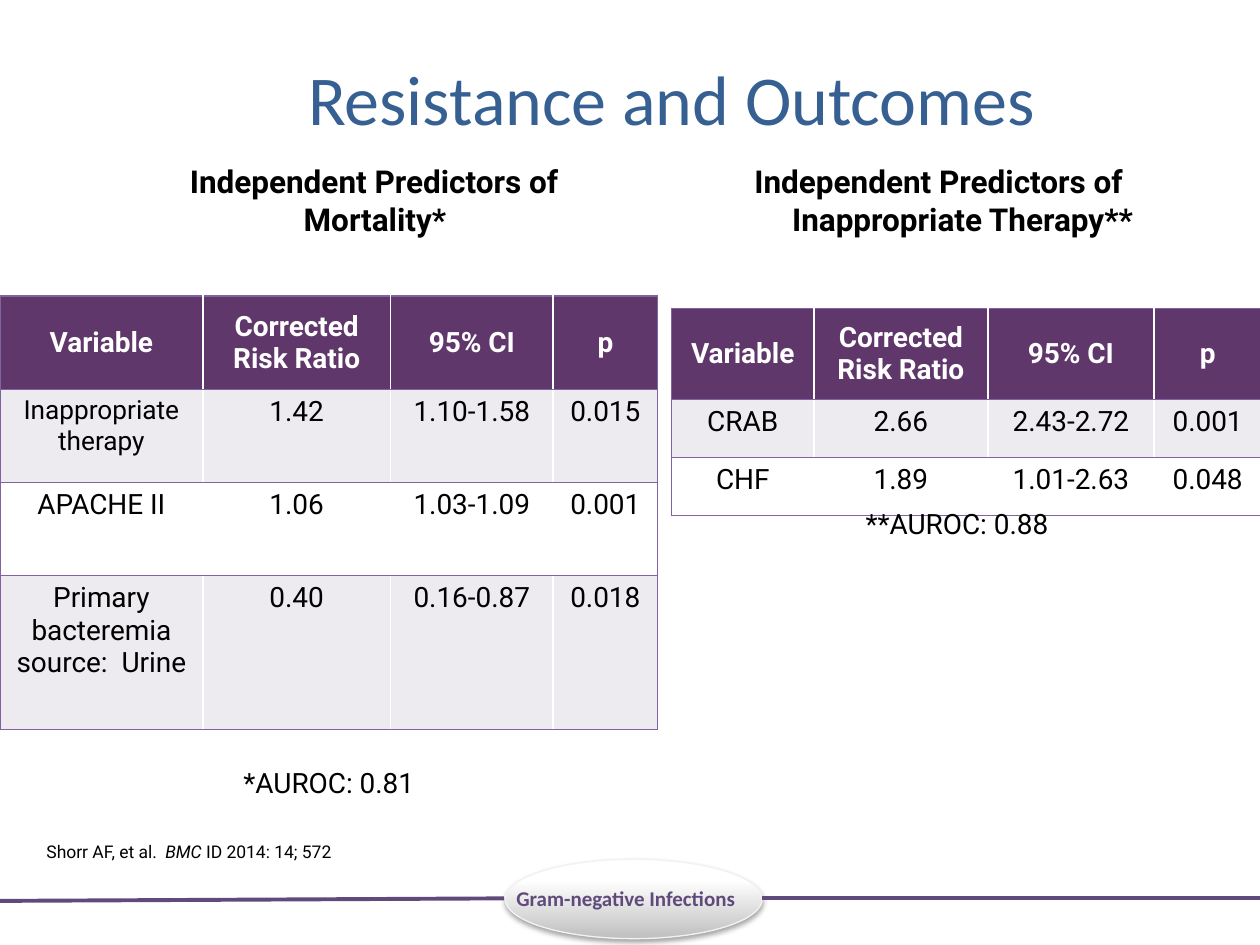
from dataclasses import dataclass

from lxml.etree import SubElement
from pptx import Presentation
from pptx.dml.color import RGBColor
from pptx.enum.shapes import MSO_CONNECTOR, MSO_SHAPE
from pptx.enum.text import MSO_ANCHOR, MSO_AUTO_SIZE, PP_ALIGN
from pptx.oxml import parse_xml
from pptx.oxml.ns import nsdecls, qn
from pptx.util import Inches, Pt

PURPLE, HEADER, BAND, BORDER = "604A7B", "5F376A", "EDEAF0", "8064A2"
BLUE, BLACK, WHITE = "376092", "000000", "FFFFFF"


@dataclass
class Box:
    left: float
    top: float
    width: float
    height: float

    def lengths(self) -> list:
        return [Inches(v) for v in (self.left, self.top, self.width, self.height)]


@dataclass
class PredictorTable:
    box: Box
    columns: list[float]
    heights: list[float]
    rows: list[list[str]]


@dataclass
class Label:
    box: Box
    text: str
    size: float = 16
    font: str = "Roboto"
    color: str = BLACK
    bold: bool = False
    align: PP_ALIGN = PP_ALIGN.CENTER
    anchor: MSO_ANCHOR = MSO_ANCHOR.TOP
    wrap: bool = False
    hanging: float = 0


COLUMN_NAMES = ["Variable", "Corrected Risk Ratio", "95% CI", "p"]
MORTALITY = PredictorTable(
    Box(0, 2.35, 5.22, 3.44), [1.61, 1.49, 1.29, 0.83], [0.74, 0.74, 0.74, 1.22],
    [COLUMN_NAMES,
     ["Inappropriate therapy", "1.42", "1.10-1.58", "0.015"],
     ["APACHE II", "1.06", "1.03-1.09", "0.001"],
     ["Primary bacteremia source:  Urine", "0.40", "0.16-0.87", "0.018"]])
THERAPY = PredictorTable(
    Box(5.33, 2.45, 4.67, 1.64), [1.13, 1.38, 1.32, 0.85], [0.72, 0.46, 0.46],
    [COLUMN_NAMES,
     ["CRAB", "2.66", "2.43-2.72", "0.001"],
     ["CHF", "1.89", "1.01-2.63", "0.048"]])

HEADINGS = [
    Label(Box(left, 1.24, 4.12, 1.14), text, 18, bold=True, wrap=True, hanging=0.38)
    for left, text in ((0.91, "Independent Predictors of Mortality*\t"),
                       (5.39, "Independent Predictors of Inappropriate Therapy**"))]
AUROC_NOTES = [Label(Box(1.75, 6.03, 1.72, 0.37), "*AUROC: 0.81"),
               Label(Box(6.69, 3.97, 1.81, 0.37), "**AUROC: 0.88")]
CITATION = Label(Box(0.27, 6.62, 2.59, 0.27), "Shorr AF, et al.  ", 10,
                 align=PP_ALIGN.LEFT, anchor=MSO_ANCHOR.BOTTOM)
TOPIC = Label(Box(4, 6.98, 2.05, 0.3), "Gram-negative Infections", 12, "Calibri",
              PURPLE, True, PP_ALIGN.LEFT)


def rgb(color: str) -> RGBColor:
    return RGBColor.from_string(color)


def style(font, size: float, name: str, color: str, bold: bool = False) -> None:
    font.size, font.name, font.bold = Pt(size), name, bold
    font.color.rgb = rgb(color)


def add_label(slide, label: Label):
    frame = slide.shapes.add_textbox(*label.box.lengths()).text_frame
    frame.word_wrap = label.wrap
    frame.vertical_anchor = label.anchor
    if not label.wrap:
        frame.auto_size = MSO_AUTO_SIZE.SHAPE_TO_FIT_TEXT
    frame.text = label.text
    paragraph = frame.paragraphs[0]
    paragraph.alignment = label.align
    if label.hanging:
        properties = paragraph._p.get_or_add_pPr()
        properties.set("marL", str(Inches(label.hanging)))
        properties.set("indent", str(-Inches(label.hanging)))
    style(paragraph.runs[0].font, label.size, label.font, label.color, label.bold)
    return paragraph


def add_citation(slide) -> None:
    paragraph = add_label(slide, CITATION)
    for text, italic in (("BMC", True), (" ID 2014: 14; 572", False)):
        run = paragraph.add_run()
        run.text = text
        style(run.font, CITATION.size, CITATION.font, CITATION.color)
        run.font.italic = italic


def add_borders(cell, sides: list[str]) -> None:
    """Put the border lines ahead of the fill, as the schema orders them."""
    properties = cell._tc.get_or_add_tcPr()
    for position, side in enumerate(sides):
        properties.insert(position, parse_xml(
            f'<a:{side} {nsdecls("a")} w="{Pt(1)}"><a:solidFill>'
            f'<a:srgbClr val="{BORDER}"/></a:solidFill></a:{side}>'))


def add_predictors(slide, predictors: PredictorTable) -> None:
    row_count, column_count = len(predictors.rows), len(predictors.columns)
    table = slide.shapes.add_table(row_count, column_count,
                                   *predictors.box.lengths()).table
    for column, width in zip(table.columns, predictors.columns):
        column.width = Inches(width)
    for r, (height, values) in enumerate(zip(predictors.heights, predictors.rows)):
        table.rows[r].height = Inches(height)
        is_header = r == 0
        fill = HEADER if is_header else BAND if r % 2 else WHITE
        for c, value in enumerate(values):
            cell = table.cell(r, c)
            cell.text = value
            cell.fill.solid()
            cell.fill.fore_color.rgb = rgb(fill)
            if is_header:
                cell.vertical_anchor = MSO_ANCHOR.MIDDLE
            paragraph = cell.text_frame.paragraphs[0]
            paragraph.alignment = PP_ALIGN.CENTER
            size = 15 if value == "Inappropriate therapy" else 16
            style(paragraph.runs[0].font, size, "Roboto",
                  WHITE if is_header else BLACK, is_header)
            left = ["lnL"] if c == 0 else []
            right = ["lnR"] if c == column_count - 1 else []
            add_borders(cell, left + right + ["lnT", "lnB"])


def add_footer(slide) -> None:
    badge = slide.shapes.add_shape(MSO_SHAPE.OVAL, *Box(4.01, 6.82, 2.04, 0.63).lengths())
    badge.fill.gradient()
    badge.fill.gradient_angle = 270
    for stop, (position, color) in zip(badge.fill.gradient_stops,
                                       ((0.26, WHITE), (1, "BFBFBF"))):
        stop.position = position
        stop.color.rgb = rgb(color)
    badge.line.color.rgb = rgb("F2F2F2")
    badge.line.width = Pt(0.75)
    badge._element.spPr.append(parse_xml(
        f'<a:effectLst {nsdecls("a")}><a:outerShdw blurRad="{Pt(3.1)}" '
        f'dist="{Pt(1.8)}" dir="5400000" algn="t" rotWithShape="0">'
        f'<a:srgbClr val="{BLACK}"><a:alpha val="35000"/></a:srgbClr>'
        '</a:outerShdw></a:effectLst>'))
    for start, end in (((0, 7.15), (4, 7.13)), ((6.05, 7.13), (10, 7.13))):
        rule = slide.shapes.add_connector(
            MSO_CONNECTOR.STRAIGHT, *[Inches(v) for v in start + end])
        rule.line.color.rgb = rgb(PURPLE)
        rule.line.width = Pt(2.25)
        SubElement(rule._element.spPr, qn("a:effectLst"))
    add_label(slide, TOPIC)


def set_title(slide) -> None:
    title = slide.shapes.title
    title.left, title.top, title.width, title.height = Box(0.92, 0.15, 8.82, 1.25).lengths()
    title.text_frame.text = "Resistance and Outcomes"
    title.text_frame.vertical_anchor = MSO_ANCHOR.MIDDLE
    paragraph = title.text_frame.paragraphs[0]
    paragraph.alignment = PP_ALIGN.CENTER
    font = paragraph.runs[0].font
    style(font, 40, "Calibri", BLUE)
    font._element.insert(0, parse_xml(
        f'<a:ln {nsdecls("a")} w="{Pt(0.75)}"><a:solidFill>'
        f'<a:srgbClr val="{BLUE}"/></a:solidFill></a:ln>'))


def main() -> None:
    presentation = Presentation()
    presentation.slide_width, presentation.slide_height = Inches(10), Inches(7.5)
    slide = presentation.slides.add_slide(presentation.slide_layouts.get_by_name("Title Only"))
    add_footer(slide)
    set_title(slide)
    for heading, predictors in zip(HEADINGS, (MORTALITY, THERAPY)):
        add_label(slide, heading)
        add_predictors(slide, predictors)
    for note in AUROC_NOTES:
        add_label(slide, note)
    add_citation(slide)
    presentation.save("out.pptx")


if __name__ == "__main__":
    main()
